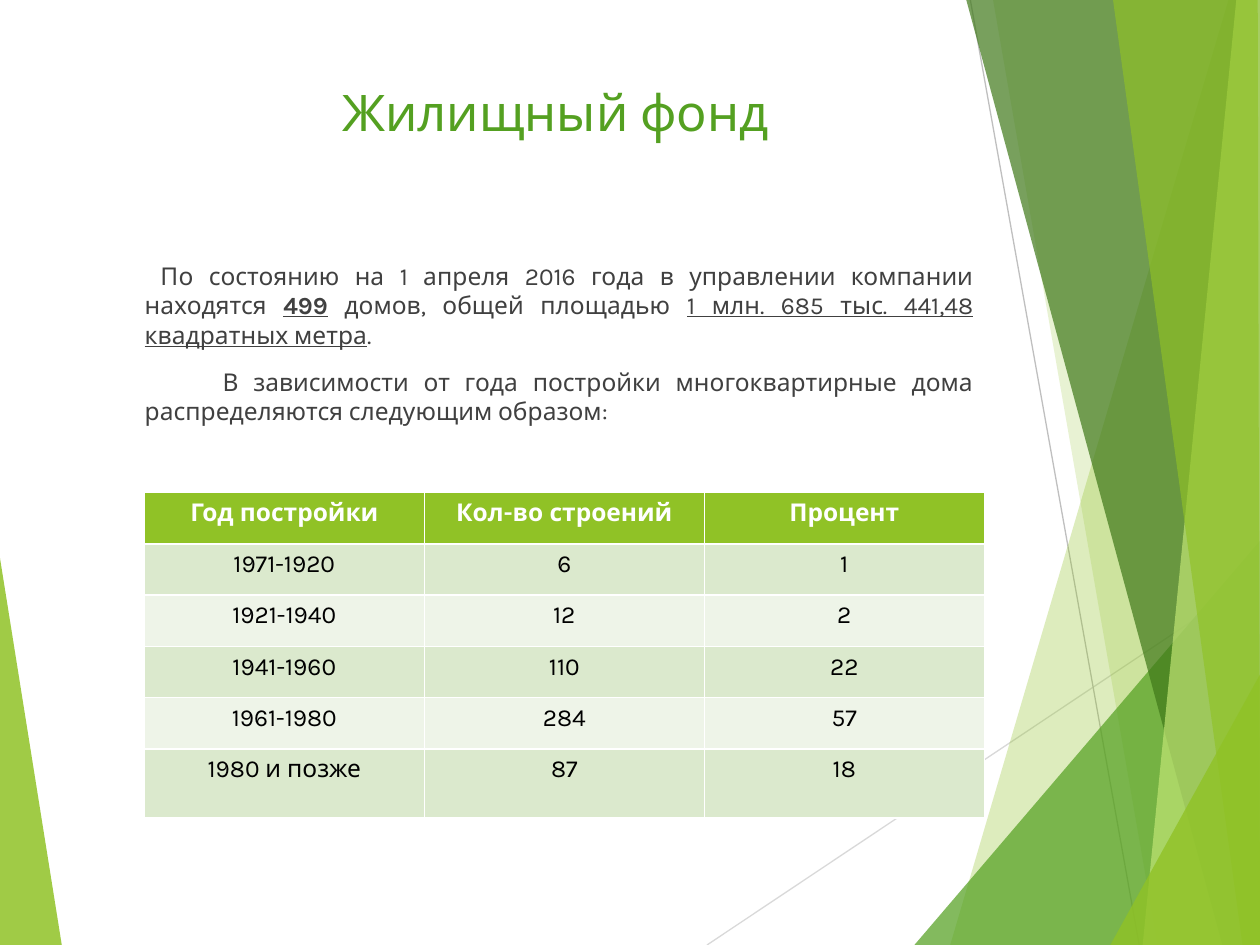
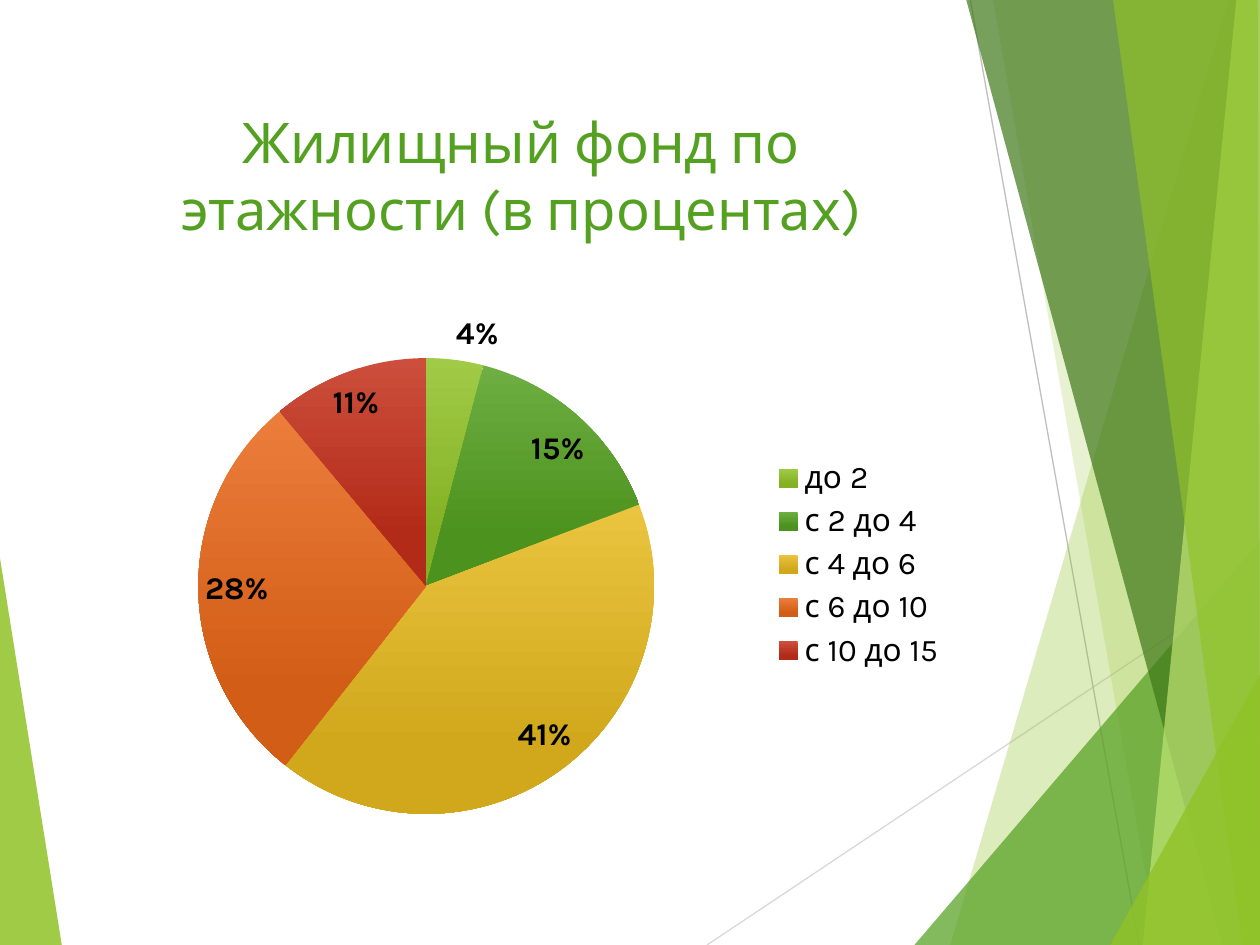
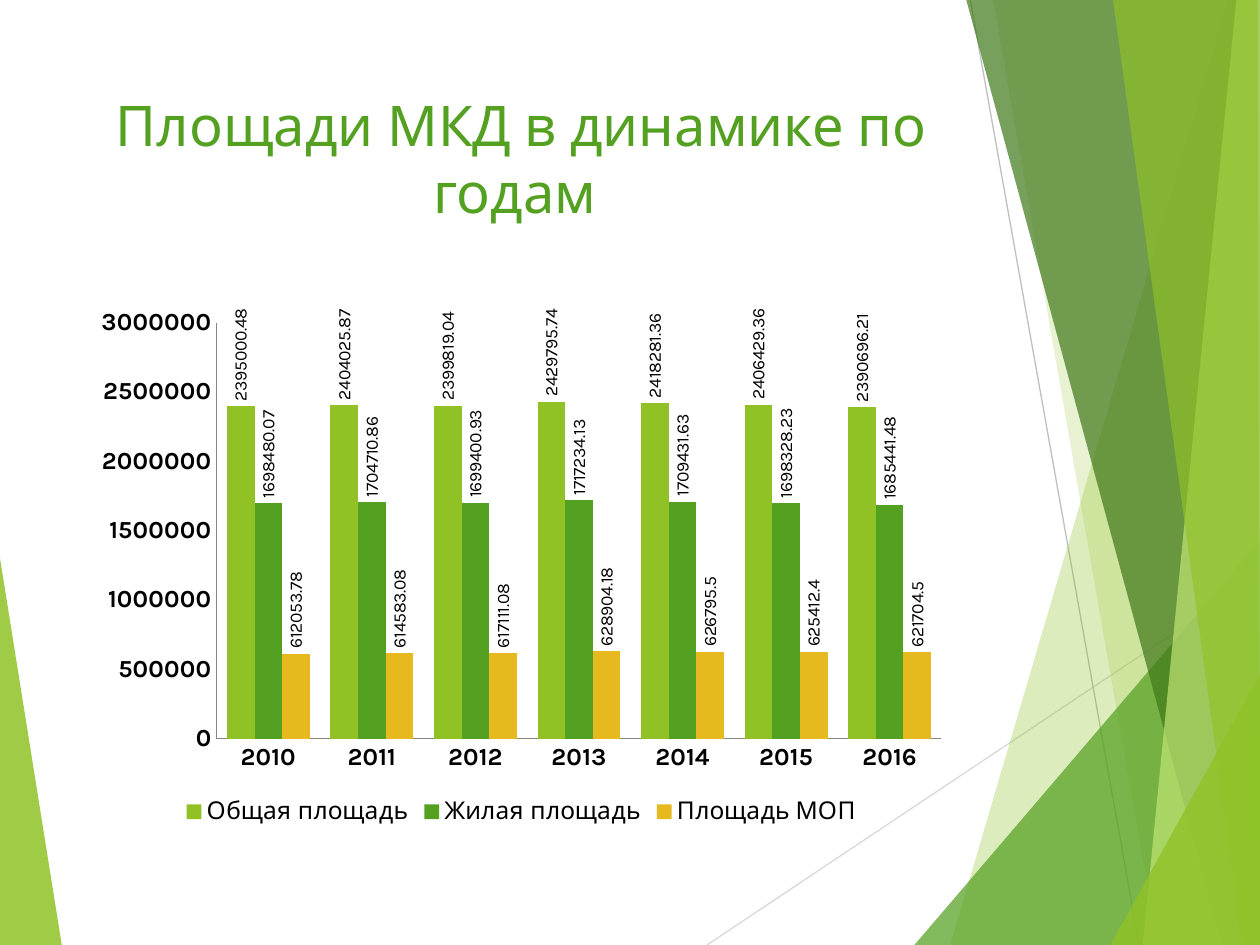
"""Build three slides about a managed housing stock: a table, a pie and a column chart."""
from lxml import etree
from pptx import Presentation
from pptx.chart.data import CategoryChartData
from pptx.dml.color import RGBColor
from pptx.enum.chart import XL_CHART_TYPE as ChartType
from pptx.enum.chart import XL_LABEL_POSITION as LabelPosition
from pptx.enum.chart import XL_LEGEND_POSITION as LegendPosition
from pptx.enum.chart import XL_TICK_MARK as TickMark
from pptx.enum.shapes import MSO_CONNECTOR as Connector
from pptx.enum.text import MSO_ANCHOR as Anchor
from pptx.enum.text import MSO_AUTO_SIZE as AutoSize
from pptx.enum.text import PP_ALIGN as Align
from pptx.oxml.ns import qn
from pptx.util import Pt

FONT = "Karla"
WIDTH, HEIGHT = 720, 540
LIME = RGBColor(0x90, 0xC2, 0x26)
GREEN = RGBColor(0x54, 0xA0, 0x21)
FOREST = RGBColor(0x3F, 0x78, 0x19)
PALE_LIME = RGBColor(0xC0, 0xE4, 0x74)
GOLD = RGBColor(0xE6, 0xB9, 0x1E)
ORANGE = RGBColor(0xE7, 0x66, 0x18)
RED = RGBColor(0xC4, 0x2F, 0x1A)
WHITE = RGBColor(0xFF, 0xFF, 0xFF)
BLACK = RGBColor(0, 0, 0)
TEXT_GRAY = RGBColor(0x40, 0x40, 0x40)
AXIS_GRAY = RGBColor(0x86, 0x86, 0x86)
LINE_GRAY = RGBColor(0xBF, 0xBF, 0xBF)
LIGHT_GRAY = RGBColor(0xD9, 0xD9, 0xD9)
BANDS = (RGBColor(0xDB, 0xE9, 0xCD), RGBColor(0xEE, 0xF4, 0xE8))

TITLE_BOX = (48, 48, 500, 104)
CHART_BOX = (48, 170, 500, 305)

RAYS = [
    (LIGHT_GRAY, (404, HEIGHT), (WIDTH, 329)),
    (LINE_GRAY, (554.5, 0), (651, HEIGHT)),
]
FACETS = [
    (LIME, 85, [(0, 319), (35.3, HEIGHT), (0, HEIGHT)]),
    (LIME, 30, [(702, 0), (543, HEIGHT), (WIDTH, HEIGHT), (WIDTH, 0)]),
    (LIME, 20, [(567.5, 0), (661.5, HEIGHT), (WIDTH, HEIGHT), (WIDTH, 0)]),
    (GREEN, 72, [(522.5, HEIGHT), (WIDTH, 309), (WIDTH, HEIGHT)]),
    (FOREST, 70, [(552.2, 0), (698.5, HEIGHT), (WIDTH, HEIGHT), (WIDTH, 0)]),
    (PALE_LIME, 70, [(706.5, 0), (653, HEIGHT), (WIDTH, HEIGHT), (WIDTH, 0)]),
    (LIME, 65, [(636, 0), (710, HEIGHT), (WIDTH, HEIGHT), (718.7, 0)]),
    (LIME, 80, [(634.5, HEIGHT), (WIDTH, 385.5), (WIDTH, HEIGHT)]),
]

INTRO = [
    (9, [("По состоянию на 1 апреля 2016 года в управлении компании находятся ", False, False),
         ("499", True, True),
         (" домов, общей площадью ", False, False),
         ("1 млн. 685 тыс. 441,48 квадратных метра", False, True),
         (".", False, False)]),
    (44.5, [("В зависимости от года постройки многоквартирные дома "
             "распределяются следующим образом:", False, False)]),
]
BUILDINGS = [
    ("Год постройки", "Кол-во строений", "Процент"),
    ("1971-1920", "6", "1"),
    ("1921-1940", "12", "2"),
    ("1941-1960", "110", "22"),
    ("1961-1980", "284", "57"),
    ("1980 и позже", "87", "18"),
]
FLOORS = [
    ("до 2", 4, LIME),
    ("с 2 до 4", 15, GREEN),
    ("с 4 до 6", 41, GOLD),
    ("с 6 до 10", 28, ORANGE),
    ("с 10 до 15", 11, RED),
]
YEARS = [str(year) for year in range(2010, 2017)]
AREAS = [
    ("Общая площадь", LIME, (2395000.48, 2404025.87, 2399819.04, 2429795.74,
                             2418281.36, 2406429.36, 2390696.21)),
    ("Жилая площадь", GREEN, (1698480.07, 1704710.86, 1699400.93, 1717234.13,
                              1709431.63, 1698328.23, 1685441.48)),
    ("Площадь МОП", GOLD, (612053.78, 614583.08, 617111.08, 628904.18,
                           626795.5, 625412.4, 621704.5)),
]


def points(values):
    """Convert a sequence of numbers to point lengths."""
    return [Pt(value) for value in values]


def style_font(font, size, color, bold=False):
    """Apply the deck typeface with a size, colour and weight."""
    font.name, font.size, font.bold = FONT, Pt(size), bold
    font.color.rgb = color


def add_span(para, text, size, color, bold=False, underline=False):
    """Append one formatted run to a paragraph."""
    span = para.add_run()
    span.text = text
    style_font(span.font, size, color, bold)
    span.font.underline = underline


def place(shape, box):
    """Move and size a shape to a box given in points."""
    shape.left, shape.top, shape.width, shape.height = points(box)


def add_ray(group, color, start, end):
    """Draw one thin background line."""
    ray = group.shapes.add_connector(Connector.STRAIGHT, *points(start + end))
    ray.line.color.rgb = color
    ray.line.width = Pt(0.75)
    etree.SubElement(ray.element.spPr, qn("a:effectLst"))


def add_facet(group, color, opacity, corners):
    """Draw one translucent background polygon."""
    start, *others = [points(corner) for corner in corners]
    builder = group.shapes.build_freeform(*start)
    builder.add_line_segments(others)
    facet = builder.convert_to_shape()
    facet.shadow.inherit = False
    facet.fill.solid()
    facet.fill.fore_color.rgb = color
    facet.line.fill.background()
    tint = facet.element.spPr.find(qn("a:solidFill")).find(qn("a:srgbClr"))
    etree.SubElement(tint, qn("a:alpha")).set("val", str(opacity * 1000))


def add_scenery(deck, page):
    """Draw the background facets and hand them to the slide master."""
    group = page.shapes.add_group_shape()
    add_facet(group, *FACETS[0])
    for ray in RAYS:
        add_ray(group, *ray)
    for facet in FACETS[1:]:
        add_facet(group, *facet)
    for number, label in enumerate(group.element.xpath(".//p:cNvPr"), 100):
        label.set("id", str(number))
    deck.slide_master.element.cSld.spTree.insert(2, group.element)


def add_page(deck, layout, title, box=TITLE_BOX, size=32, anchor=Anchor.TOP):
    """Add a slide with a styled title."""
    page = deck.slides.add_slide(deck.slide_layouts.get_by_name(layout))
    heading = page.shapes.title
    place(heading, box)
    frame = heading.text_frame
    frame.auto_size, frame.vertical_anchor = AutoSize.NONE, anchor
    para = frame.paragraphs[0]
    para.alignment = Align.CENTER
    add_span(para, title, size, GREEN)
    return page


def fill_body(body, box, paragraphs):
    """Write justified paragraphs without bullets into the body placeholder."""
    place(body, box)
    frame = body.text_frame
    frame.auto_size = AutoSize.NONE
    for index, (indent, spans) in enumerate(paragraphs):
        para = frame.add_paragraph() if index else frame.paragraphs[0]
        para.alignment, para.space_before = Align.JUSTIFY, Pt(10)
        properties = para._p.get_or_add_pPr()
        properties.set("marL", str(Pt(5)))
        properties.set("indent", str(Pt(indent)))
        etree.SubElement(properties, qn("a:buNone"))
        for text, bold, underline in spans:
            add_span(para, text, 14, TEXT_GRAY, bold, underline)


def add_grid(page, rows, box, row_height):
    """Add a centred table with a header, banded rows and a taller last row."""
    grid = page.shapes.add_table(len(rows), len(rows[0]), *points(box)).table
    for row in grid.rows:
        row.height = Pt(row_height)
    grid.rows[len(rows) - 1].height = Pt(box[3] - row_height * (len(rows) - 1))
    for row_index, row in enumerate(rows):
        header = row_index == 0
        for column_index, text in enumerate(row):
            cell = grid.cell(row_index, column_index)
            cell.fill.solid()
            cell.fill.fore_color.rgb = LIME if header else BANDS[(row_index - 1) % 2]
            para = cell.text_frame.paragraphs[0]
            para.alignment = Align.CENTER
            add_span(para, text, 14, WHITE if header else BLACK, header)


def add_graph(page, kind, categories, series, legend_position, legend_size):
    """Add a chart with the shared font and legend settings."""
    data = CategoryChartData()
    data.categories = categories
    for name, values in series:
        data.add_series(name, values)
    chart = page.shapes.add_chart(kind, *points(CHART_BOX), data).chart
    chart.has_title = False
    style_font(chart.font, 18, BLACK)
    chart.has_legend = True
    chart.legend.position = legend_position
    chart.legend.include_in_layout = False
    style_font(chart.legend.font, legend_size, BLACK)
    return chart


def shade_slice(fill, color):
    """Fill a pie slice from a lighter to a darker tone, top to bottom."""
    fill.gradient()
    fill.gradient_angle = 270
    top, bottom = fill.gradient_stops
    top.color.rgb = RGBColor(*(round(part + (255 - part) * 0.15) for part in color))
    bottom.color.rgb = RGBColor(*(round(part * 0.91) for part in color))
    bottom.position = 0.78


def add_floor_pie(page):
    """Add the pie of buildings by number of floors."""
    names, shares, colors = zip(*FLOORS)
    chart = add_graph(page, ChartType.PIE, names, [("Series 1", shares)],
                      LegendPosition.RIGHT, 18)
    plot = chart.plots[0]
    plot.vary_by_categories = True
    for index, color in enumerate(colors):
        shade_slice(plot.series[0].points[index].format.fill, color)
    plot.has_data_labels = True
    labels = plot.data_labels
    labels.show_value, labels.show_percentage = False, True
    labels.number_format, labels.number_format_is_linked = "0%", False
    labels.position = LabelPosition.BEST_FIT
    style_font(labels.font, 18, BLACK, True)


def add_area_columns(page):
    """Add the columns of floor areas by year."""
    chart = add_graph(page, ChartType.COLUMN_CLUSTERED, YEARS,
                      [(name, values) for name, _, values in AREAS],
                      LegendPosition.BOTTOM, 14)
    plot = chart.plots[0]
    plot.vary_by_categories = False
    plot.gap_width, plot.overlap = 75, 0
    for series, (_, color, _) in zip(plot.series, AREAS):
        series.format.fill.solid()
        series.format.fill.fore_color.rgb = color
    plot.has_data_labels = True
    labels = plot.data_labels
    labels.show_value = True
    labels.position = LabelPosition.OUTSIDE_END
    style_font(labels.font, 10, BLACK)
    for frame in chart.element.xpath(".//c:dLbls/c:txPr/a:bodyPr"):
        frame.set("rot", "-5400000")
        frame.set("vert", "horz")
    for axis in (chart.category_axis, chart.value_axis):
        axis.has_major_gridlines = False
        axis.major_tick_mark = axis.minor_tick_mark = TickMark.NONE
        axis.format.line.color.rgb = AXIS_GRAY
        style_font(axis.tick_labels.font, 14, BLACK, True)
    chart.value_axis.minimum_scale = 0
    chart.value_axis.maximum_scale = 3000000
    chart.value_axis.major_unit = 500000


def main():
    """Build and save the deck."""
    deck = Presentation()
    deck.slide_width, deck.slide_height = Pt(WIDTH), Pt(HEIGHT)

    page = add_page(deck, "Title and Content", "Жилищный фонд", (180, 43, 275, 45.5), 28.8)
    add_scenery(deck, page)
    fill_body(page.placeholders[1], (70.5, 145.5, 493, 335), INTRO)
    add_grid(page, BUILDINGS, (82.5, 281.5, 480, 186), 29.3)

    page = add_page(deck, "Title Only", "Жилищный фонд по этажности (в процентах)",
                    anchor=Anchor.MIDDLE)
    add_floor_pie(page)

    page = add_page(deck, "Title Only", "Площади МКД в динамике по годам ")
    add_area_columns(page)

    deck.save("out.pptx")


if __name__ == "__main__":
    main()
